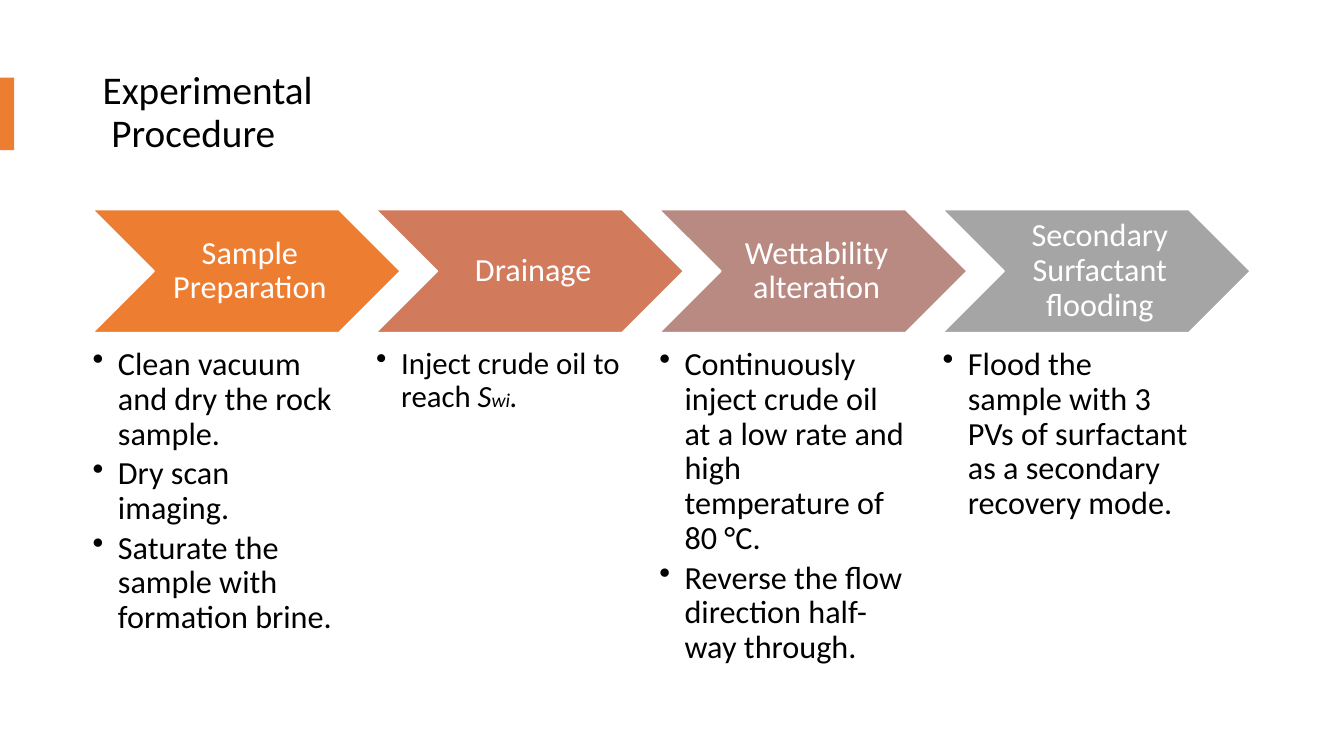
from lxml import etree
from pptx import Presentation
from pptx.dml.color import RGBColor
from pptx.enum.shapes import MSO_SHAPE
from pptx.enum.text import MSO_ANCHOR, PP_ALIGN
from pptx.oxml.ns import qn
from pptx.util import Inches, Pt

CHEVRON, RECTANGLE = MSO_SHAPE.CHEVRON, MSO_SHAPE.RECTANGLE
TOP, MIDDLE = MSO_ANCHOR.TOP, MSO_ANCHOR.MIDDLE
LEFT, CENTER = PP_ALIGN.LEFT, PP_ALIGN.CENTER

WHITE = RGBColor(0xFF, 0xFF, 0xFF)
BLACK = RGBColor(0x00, 0x00, 0x00)
ORANGE = RGBColor(0xED, 0x7D, 0x31)
TERRACOTTA = RGBColor(0xD1, 0x7B, 0x5C)
ROSE = RGBColor(0xB9, 0x8A, 0x82)
GRAY = RGBColor(0xA5, 0xA5, 0xA5)

FONT = "Calibri"
STEP_LEFT, STEP_PITCH = 0.92, 2.81
STEP_SIZE = 23

STEPS = [
    ("Sample Preparation", ORANGE, [
        [("Clean vacuum and dry the rock sample.", {})],
        [("Dry scan imaging.", {})],
        [("Saturate the sample with formation brine.", {})],
    ]),
    ("Drainage", TERRACOTTA, [
        [("Inject crude oil to reach ", {"size": Pt(22)}),
         ("S", {"size": Pt(22), "italic": True}),
         ("wi", {"size": Pt(14), "italic": True}),
         (".", {"size": Pt(22), "italic": True})],
    ]),
    ("Wettability alteration", ROSE, [
        [("Continuously inject crude oil at a low rate and high temperature of 80 °C.", {})],
        [("Reverse the flow direction half-way through.", {})],
    ]),
    ("Secondary Surfactant flooding", GRAY, [
        [("Flood the sample with 3 PVs of surfactant as a secondary recovery mode.", {})],
    ]),
]


def apply_format(target, values):
    """Set each named attribute on the target."""
    for name, value in values.items():
        setattr(target, name, value)


def format_frame(frame, anchor, insets):
    """Set wrapping, anchor and the left, top, right and bottom insets."""
    left, top, right, bottom = map(Inches, insets)
    apply_format(frame, {
        "word_wrap": True, "vertical_anchor": anchor,
        "margin_left": left, "margin_top": top,
        "margin_right": right, "margin_bottom": bottom,
    })


def format_paragraph(paragraph, size, color, align=LEFT):
    """Set the alignment, line spacing and font of a paragraph."""
    apply_format(paragraph, {"alignment": align, "line_spacing": 0.9})
    apply_format(paragraph.font, {"name": FONT, "size": Pt(size)})
    paragraph.font.color.rgb = color


def add_bullet(paragraph):
    """Give a paragraph a round bullet with a hanging indent."""
    properties = paragraph._p.get_or_add_pPr()
    properties.set("marL", str(Inches(0.25)))
    properties.set("indent", str(-Inches(0.25)))
    etree.SubElement(properties, qn("a:buChar")).set("char", "•")


def add_filled_shape(slide, preset, bounds, color):
    """Add a flat preset shape without an outline."""
    shape = slide.shapes.add_shape(preset, *map(Inches, bounds))
    shape.shadow.inherit = False
    shape.fill.solid()
    shape.fill.fore_color.rgb = color
    shape.line.fill.background()
    return shape


def add_title(slide, wording):
    """Add the slide title."""
    title = slide.shapes.add_textbox(*map(Inches, (0.92, 0.4, 11.5, 1.45)))
    format_frame(title.text_frame, MIDDLE, (0.1, 0.05, 0.1, 0.05))
    title.text_frame.text = wording
    format_paragraph(title.text_frame.paragraphs[0], 28, BLACK)


def add_step_arrow(slide, left, heading, color):
    """Add the chevron that names a step."""
    arrow = add_filled_shape(slide, CHEVRON, (left, 2.08, 3.05, 1.22), color)
    arrow.line.color.rgb = WHITE
    arrow.line.width = Pt(1)
    format_frame(arrow.text_frame, MIDDLE, (0.1, 0.03, 0.03, 0.03))
    arrow.text_frame.text = heading
    format_paragraph(arrow.text_frame.paragraphs[0], STEP_SIZE, WHITE, CENTER)


def add_step_details(slide, left, details):
    """Add the bulleted actions below a step."""
    box = slide.shapes.add_textbox(*map(Inches, (left, 3.45, 2.44, 3.22)))
    frame = box.text_frame
    format_frame(frame, TOP, (0, 0, 0, 0))
    for index, pieces in enumerate(details):
        paragraph = frame.add_paragraph() if index else frame.paragraphs[0]
        add_bullet(paragraph)
        format_paragraph(paragraph, STEP_SIZE, BLACK)
        paragraph.space_after = Pt(3.5)
        for wording, style in pieces:
            run = paragraph.add_run()
            run.text = wording
            apply_format(run.font, {"name": FONT, "size": Pt(STEP_SIZE), **style})
            run.font.color.rgb = BLACK


def main():
    """Build the experimental procedure slide."""
    deck = Presentation()
    deck.slide_width, deck.slide_height = Inches(13.33), Inches(7.5)
    slide = deck.slides.add_slide(deck.slide_layouts[6])
    add_title(slide, "Experimental\v Procedure")
    for index, (heading, color, details) in enumerate(STEPS):
        left = STEP_LEFT + index * STEP_PITCH
        add_step_arrow(slide, left, heading, color)
        add_step_details(slide, left, details)
    add_filled_shape(slide, RECTANGLE, (0, 0.77, 0.14, 0.72), ORANGE)
    deck.save("out.pptx")


if __name__ == "__main__":
    main()
